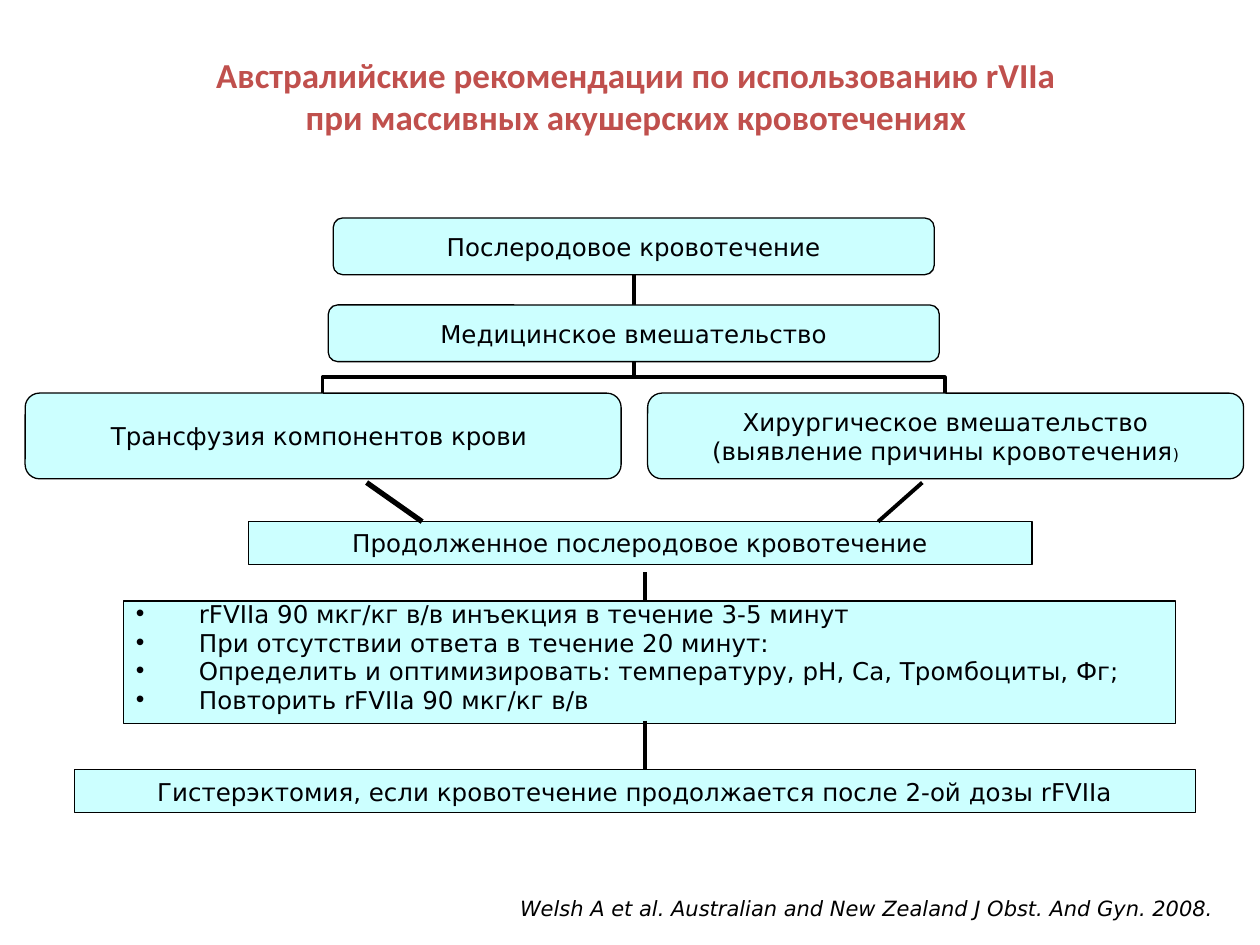
from lxml import etree
from pptx import Presentation
from pptx.dml.color import RGBColor
from pptx.enum.shapes import MSO_CONNECTOR, MSO_SHAPE
from pptx.enum.text import MSO_ANCHOR, MSO_AUTO_SIZE, PP_ALIGN
from pptx.oxml.ns import qn
from pptx.util import Inches, Pt

ROUNDED, RECT = MSO_SHAPE.ROUNDED_RECTANGLE, MSO_SHAPE.RECTANGLE
STRAIGHT, ELBOW = MSO_CONNECTOR.STRAIGHT, MSO_CONNECTOR.ELBOW
LEFT, CENTER, RIGHT = PP_ALIGN.LEFT, PP_ALIGN.CENTER, PP_ALIGN.RIGHT
TOP, MIDDLE = MSO_ANCHOR.TOP, MSO_ANCHOR.MIDDLE
NO_FIT = MSO_AUTO_SIZE.NONE

COLORS = {"title": "C0504D", "box": "CCFFFF", "line": "000000",
          "text": "000004", "source": "000000"}
COLUMNS, ROWS = 100, 75
QUARTER_TURN = 5400000


class FlowSlide:
    body_font, title_font = "DejaVu Sans", "Calibri"
    body_size = 14

    def __init__(self, deck):
        self.column = deck.slide_width / COLUMNS
        self.row = deck.slide_height / ROWS
        self.slide = deck.slides.add_slide(deck.slide_layouts[5])

    def place(self, x, y, width, height):
        return (round(x * self.column), round(y * self.row),
                round(width * self.column), round(height * self.row))

    def color(self, role):
        return RGBColor.from_string(COLORS[role])

    def run(self, paragraph, text, role="text", size=None, font=None, bold=False, italic=False):
        run = paragraph.add_run()
        run.text = text
        run.font.name = font or self.body_font
        run.font.size = Pt(size or self.body_size)
        run.font.bold, run.font.italic = bold, italic
        run.font.color.rgb = self.color(role)

    def frame(self, shape, anchor, wrap=True, margins=(0.1, 0.05)):
        frame = shape.text_frame
        frame.auto_size, frame.word_wrap, frame.vertical_anchor = NO_FIT, wrap, anchor
        frame.margin_left = frame.margin_right = Inches(margins[0])
        frame.margin_top = frame.margin_bottom = Inches(margins[1])
        return frame

    def title(self, lines, *area):
        heading = self.slide.shapes.title
        heading.left, heading.top, heading.width, heading.height = self.place(*area)
        paragraph = self.frame(heading, MIDDLE).paragraphs[0]
        paragraph.alignment = CENTER
        for index, line in enumerate(lines):
            if index:
                paragraph.add_line_break()
            self.run(paragraph, line, "title", 20, self.title_font, bold=True)

    def box(self, lines, *area, kind=RECT, anchor=MIDDLE, bulleted=False, wrap=True,
            margins=(0.1, 0.05)):
        box = self.slide.shapes.add_shape(kind, *self.place(*area))
        box.shadow.inherit = False
        box.fill.solid()
        box.fill.fore_color.rgb = self.color("box")
        box.line.color.rgb = self.color("line")
        box.line.width = Pt(0.75)
        frame = self.frame(box, anchor, wrap, margins)
        for index, runs in enumerate(lines):
            paragraph = frame.add_paragraph() if index else frame.paragraphs[0]
            paragraph.alignment = LEFT if bulleted else CENTER
            if bulleted:
                self.bullet(paragraph, index)
            for text, size in runs:
                self.run(paragraph, text, size=size)

    def bullet(self, paragraph, index):
        paragraph.line_spacing = 0.7
        if index:
            paragraph.space_before = Pt(4.6)
        properties = paragraph._p.get_or_add_pPr()
        properties.set("marL", str(Inches(0.5)))
        properties.set("indent", str(-Inches(0.5)))
        etree.SubElement(properties, qn("a:buFont")).set("typeface", "Arial")
        etree.SubElement(properties, qn("a:buChar")).set("char", "•")

    def line(self, x1, y1, x2, y2, kind=STRAIGHT, weight=2.25):
        start_x, start_y, end_x, end_y = self.place(x1, y1, x2, y2)
        link = self.slide.shapes.add_connector(kind, start_x, start_y, end_x, end_y)
        link.line.color.rgb = self.color("line")
        link.line.width = Pt(weight)
        etree.SubElement(link._element.spPr, qn("a:effectLst"))
        return link

    def branch(self, x1, y1, x2, y2):
        middle_x, middle_y = (x1 + x2) / 2, (y1 + y2) / 2
        half_width, half_height = (y1 - y2) / 2, abs(x1 - x2) / 2
        side = 1 if x1 > x2 else -1
        link = self.line(middle_x + side * half_width, middle_y - half_height,
                         middle_x - side * half_width, middle_y + half_height, ELBOW)
        turns = 1 if side > 0 else 3
        link._element.spPr.find(qn("a:xfrm")).set("rot", str(turns * QUARTER_TURN))

    def source(self, text, *area):
        note = self.slide.shapes.add_textbox(*self.place(*area))
        paragraph = self.frame(note, TOP).paragraphs[0]
        paragraph.alignment = RIGHT
        self.run(paragraph, text, "source", 12, italic=True)


def main():
    deck = Presentation()
    deck.slide_width, deck.slide_height = Inches(10), Inches(7.5)
    flow = FlowSlide(deck)
    flow.title(["Австралийские рекомендации по использованию rVIIa ",
                "при массивных акушерских кровотечениях "], 0, 2.8, 101.6, 9.5)

    tree_axis, main_axis = 50.3, 51.2
    for arm_x in (75, 25.6):
        flow.branch(arm_x, 31.2, tree_axis, 28.7)
    flow.line(tree_axis, 24.2, tree_axis, 21.7)

    for text, y, width in (("Послеродовое кровотечение", 17.3, 47.7),
                           ("Медицинское вмешательство", 24.2, 48.5)):
        flow.box([[(text, 14)]], tree_axis - width / 2, y, width, 4.5,
                 kind=ROUNDED, wrap=False, margins=(0.05, 0.03))

    treatments = (
        (2, [[("Трансфузия компонентов крови ", 14)]]),
        (51.4, [[("Хирургическое вмешательство", 14)],
                [("(выявление причины кровотечения", 14), (")", 9)]]),
    )
    for x, lines in treatments:
        flow.box(lines, x, 31.2, 47.3, 6.8, kind=ROUNDED, wrap=False, margins=(0.08, 0.04))

    flow.source("Welsh A et al. Australian and New Zealand J Obst. And Gyn. 2008.",
                4.7, 70.6, 92.6, 3)

    flow.box([[("Продолженное послеродовое кровотечение", 14)]], 19.7, 41.4, 62.2, 3.4)
    flow.line(73.2, 38.3, 69.7, 41.4)
    flow.line(29.1, 38.3, 33.5, 41.4, weight=3)

    steps = ("rFVIIa 90 мкг/кг в/в инъекция в течение 3-5 минут",
             "При отсутствии ответа в течение 20 минут:",
             "Определить и оптимизировать: температуру, рН, Са, Тромбоциты, Фг;",
             "Повторить rFVIIa 90 мкг/кг в/в")
    flow.box([[(step, 14)] for step in steps], 9.8, 47.7, 83.5, 9.7,
             anchor=TOP, bulleted=True)
    flow.line(main_axis, 45.4, main_axis, 47.7)

    flow.box([[("Гистерэктомия, если кровотечение продолжается после 2-ой дозы rFVIIa", 14)]],
             5.9, 61.1, 89, 3.4)
    flow.line(main_axis, 57.2, main_axis, 61.1)
    deck.save("out.pptx")


if __name__ == "__main__":
    main()
